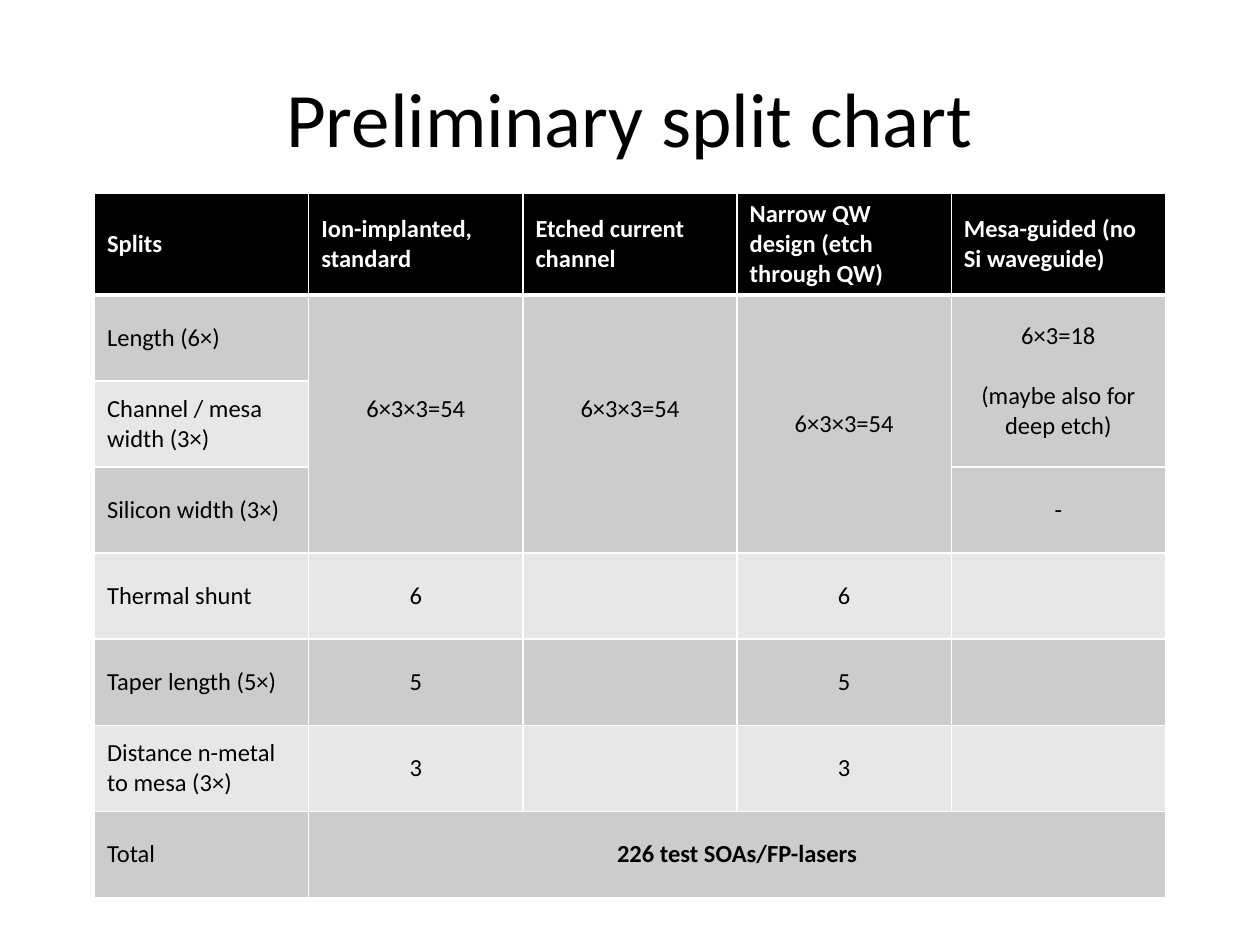
from dataclasses import dataclass

from lxml import etree
from pptx import Presentation
from pptx.dml.color import RGBColor
from pptx.enum import text
from pptx.oxml import ns
from pptx.util import Pt

BLACK = RGBColor(0x00, 0x00, 0x00)
WHITE = RGBColor(0xFF, 0xFF, 0xFF)
DARK_BAND = RGBColor(0xCC, 0xCC, 0xCC)
LIGHT_BAND = RGBColor(0xE7, 0xE7, 0xE7)
FONT = "Calibri"
COLUMN_WIDTH = Pt(122.4)
HEADER_HEIGHT = Pt(58)
ROW_HEIGHT = Pt(49.2)

HEADINGS = [
    "Splits",
    "Ion-implanted, standard",
    "Etched current channel",
    "Narrow QW design (etch through QW)",
    "Mesa-guided (no Si waveguide)",
]
SPLITS = [
    "Length (6×)",
    "Channel / mesa width (3×)",
    "Silicon width (3×)",
    "Thermal shunt",
    "Taper length (5×)",
    "Distance n-metal to mesa (3×)",
    "Total",
]


@dataclass
class Count:
    row: int
    column: int
    words: str
    rows: int = 1
    columns: int = 1
    bold: bool = False
    bottom_margin: float = 3.6


COUNTS = [
    Count(1, 1, "6×3×3=54", rows=3, bottom_margin=20.4),
    Count(1, 2, "6×3×3=54", rows=3, bottom_margin=20.4),
    Count(1, 3, "6×3×3=54", rows=3),
    Count(1, 4, "6×3=18\n(maybe also for deep etch)", rows=2),
    Count(3, 4, "-"),
    *[Count(row, column, number)
      for row, number in ((4, "6"), (5, "5"), (6, "3"))
      for column in (1, 3)],
    Count(7, 1, "226 test SOAs/FP-lasers", columns=4, bold=True),
]


def add_border(cell, side: str, width: float) -> None:
    properties = cell._tc.get_or_add_tcPr()
    line = etree.SubElement(properties, ns.qn(f"a:ln{side}"), w=str(Pt(width)))
    fill = etree.SubElement(line, ns.qn("a:solidFill"))
    etree.SubElement(fill, ns.qn("a:srgbClr"), val=str(WHITE))


def style_cell(cell, row: int) -> None:
    widths = {"L": 1, "R": 1, "T": 3 if row == 1 else 1, "B": 3 if row == 0 else 1}
    for side, width in widths.items():
        add_border(cell, side, width)
    cell.fill.solid()
    if row == 0:
        cell.fill.fore_color.rgb = BLACK
    else:
        cell.fill.fore_color.rgb = DARK_BAND if row % 2 else LIGHT_BAND
    cell.vertical_anchor = text.MSO_ANCHOR.MIDDLE


def write_cell(cell, words: str, color: RGBColor = BLACK, bold: bool = False,
               align: text.PP_ALIGN = text.PP_ALIGN.LEFT) -> None:
    cell.text_frame.text = words
    for index, paragraph in enumerate(cell.text_frame.paragraphs):
        paragraph.alignment = align
        paragraph.space_before = Pt(17 if index else 0)
        paragraph.font.name = FONT
        paragraph.font.size = Pt(14)
        paragraph.font.bold = bold
        paragraph.font.color.rgb = color


def write_count(table, count: Count) -> None:
    cell = table.cell(count.row, count.column)
    if count.rows > 1 or count.columns > 1:
        cell.merge(table.cell(count.row + count.rows - 1,
                              count.column + count.columns - 1))
    write_cell(cell, count.words, bold=count.bold, align=text.PP_ALIGN.CENTER)
    cell.margin_bottom = Pt(count.bottom_margin)


def add_title(slide) -> None:
    title = slide.shapes.title
    title.left, title.top, title.width, title.height = Pt(36), Pt(21.6), Pt(648), Pt(90)
    title.text_frame.text = "Preliminary split chart"
    title.text_frame.vertical_anchor = text.MSO_ANCHOR.MIDDLE
    paragraph = title.text_frame.paragraphs[0]
    paragraph.alignment = text.PP_ALIGN.CENTER
    paragraph.font.name = FONT
    paragraph.font.size = Pt(44)
    paragraph.font.color.rgb = BLACK


def add_split_table(slide) -> None:
    rows, columns = len(SPLITS) + 1, len(HEADINGS)
    table = slide.shapes.add_table(
        rows, columns, Pt(54), Pt(110.2), COLUMN_WIDTH * columns,
        HEADER_HEIGHT + ROW_HEIGHT * len(SPLITS)).table
    for column in table.columns:
        column.width = COLUMN_WIDTH
    for index, row in enumerate(table.rows):
        row.height = ROW_HEIGHT if index else HEADER_HEIGHT
        for cell in row.cells:
            style_cell(cell, index)
    for column, heading in enumerate(HEADINGS):
        write_cell(table.cell(0, column), heading, color=WHITE, bold=True)
    for row, split in enumerate(SPLITS, start=1):
        write_cell(table.cell(row, 0), split)
    for count in COUNTS:
        write_count(table, count)


def main() -> None:
    deck = Presentation()
    deck.slide_width, deck.slide_height = Pt(720), Pt(540)
    slide = deck.slides.add_slide(deck.slide_layouts[5])
    add_title(slide)
    add_split_table(slide)
    deck.save("out.pptx")


if __name__ == "__main__":
    main()
